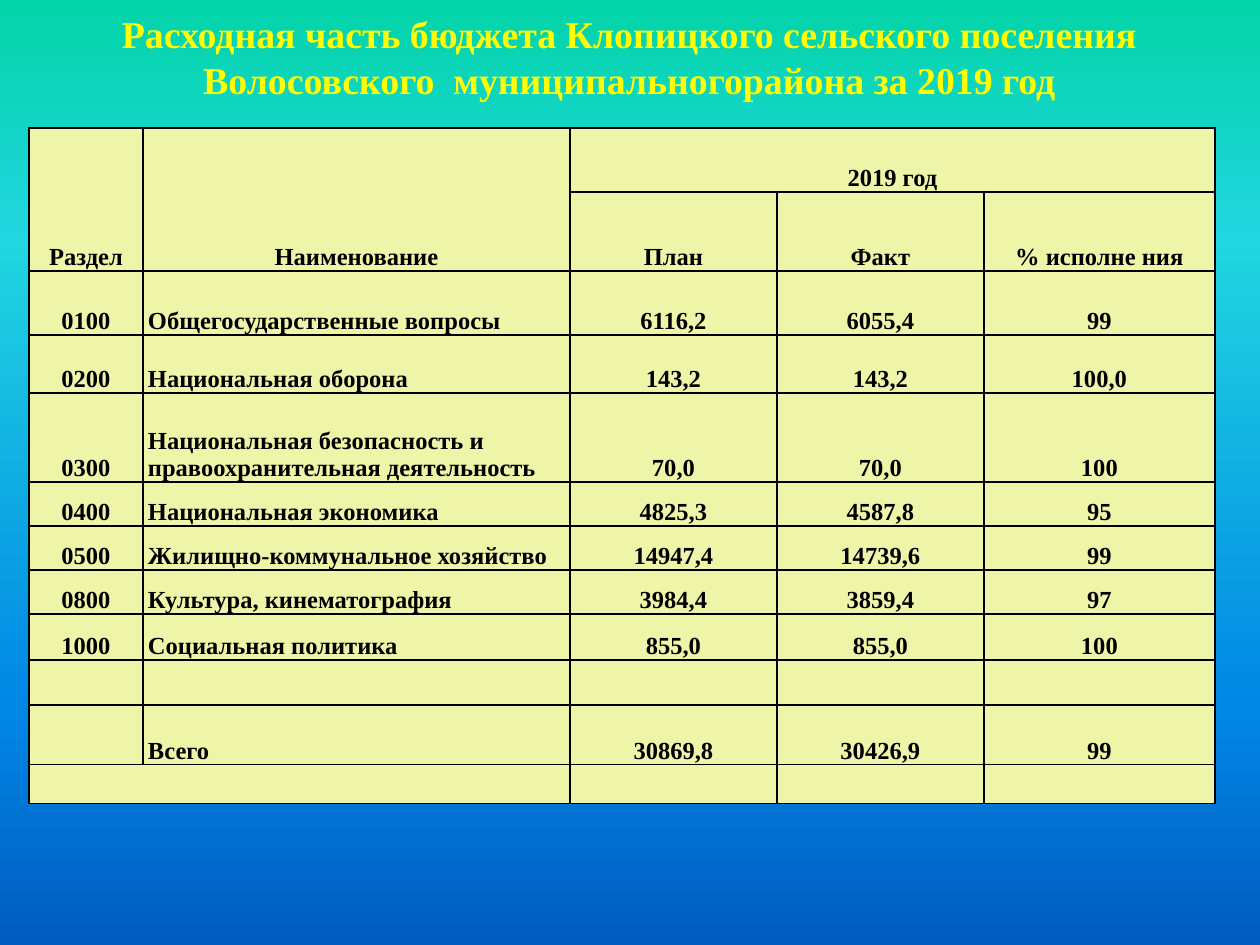
from copy import deepcopy

from lxml.etree import SubElement
from pptx import Presentation
from pptx.dml.color import RGBColor
from pptx.enum.text import MSO_ANCHOR as Anchor, MSO_AUTO_SIZE as AutoSize, PP_ALIGN as Align
from pptx.oxml.ns import qn
from pptx.util import Pt

EMU_PER_PX = 914400 // 126
COLORS = {"title": "FFFF00", "ink": "000000", "cell": "EEF5A9"}
SKY = [(0, "03D4A8"), (25, "21D6E0"), (75, "0087E6"), (100, "005CBF")]

TITLE = ("Расходная часть бюджета Клопицкого сельского поселения "
         "Волосовского  муниципальногорайона за 2019 год")
TITLE_FONT = {"name": "Times New Roman", "size": Pt(21.6), "bold": True}
TABLE_FONT = {"name": "Times New Roman", "size": Pt(14), "bold": True}

COLUMN_WIDTHS = [114, 427, 207, 207, 231]
ROW_HEIGHTS = [64, 79, 64, 58, 89, 44, 44, 44, 46, 45, 60, 39]
HEADER_ROWS = 2
NAME_COLUMN = 1
BUDGET = [
    ["Раздел", "Наименование", "2019 год", "", ""],
    ["", "", "План", "Факт", "% исполне ния"],
    ["0100", "Общегосударственные вопросы", "6116,2", "6055,4", "99"],
    ["0200", "Национальная оборона", "143,2", "143,2", "100,0"],
    ["0300", "Национальная безопасность и правоохранительная деятельность",
     "70,0", "70,0", "100"],
    ["0400", "Национальная экономика", "4825,3", "4587,8", "95"],
    ["0500", "Жилищно-коммунальное хозяйство", "14947,4", "14739,6", "99"],
    ["0800", "Культура, кинематография", "3984,4", "3859,4", "97"],
    ["1000", "Социальная политика", "855,0", "855,0", "100"],
    ["", "", "", "", ""],
    ["", "Всего", "30869,8", "30426,9", "99"],
    ["", "", "", "", ""],
]
# Merged areas: first and last cell as (row, column)
MERGES = [((0, 0), (1, 0)), ((0, 1), (1, 1)), ((0, 2), (0, 4)), ((11, 0), (11, 1))]


def px(length):
    return length * EMU_PER_PX


def apply_format(target, values):
    for name, value in values.items():
        setattr(target, name, value)


def write(paragraph, text, font, color):
    run = paragraph.add_run()
    run.text = text
    apply_format(run.font, font)
    run.font.color.rgb = RGBColor.from_string(COLORS[color])


def paint_background(slide):
    fill = slide.background.fill
    fill.gradient()
    fill.gradient_angle = 270  # downwards
    stop_list = slide.element.find(".//" + qn("a:gsLst"))
    while len(stop_list) < len(SKY):
        stop_list.append(deepcopy(stop_list[0]))
    for stop, (position, color) in zip(fill.gradient_stops, SKY):
        stop.position = position / 100
        stop.color.rgb = RGBColor.from_string(color)


def add_title(slide):
    title = slide.shapes.title
    apply_format(title, {"left": px(29), "top": 0, "width": px(1201), "height": px(108)})
    apply_format(title.text_frame, {"word_wrap": True, "auto_size": AutoSize.NONE,
                                    "vertical_anchor": Anchor.BOTTOM})
    heading = title.text_frame.paragraphs[0]
    heading.alignment = Align.CENTER
    write(heading, TITLE, TITLE_FONT, "title")


def add_borders(cell):
    properties = cell._tc.get_or_add_tcPr()
    for position, side in enumerate(("a:lnL", "a:lnR", "a:lnT", "a:lnB")):
        line = SubElement(properties, qn(side), w=str(Pt(1)))
        SubElement(SubElement(line, qn("a:solidFill")), qn("a:srgbClr"), val=COLORS["ink"])
        properties.insert(position, line)  # borders come before the fill


def format_cell(cell, text, is_name):
    apply_format(cell, {"margin_left": px(5 if is_name else 1), "margin_right": px(1),
                        "margin_top": px(1), "margin_bottom": 0,
                        "vertical_anchor": Anchor.BOTTOM})
    cell.fill.solid()
    cell.fill.fore_color.rgb = RGBColor.from_string(COLORS["cell"])
    add_borders(cell)
    paragraph = cell.text_frame.paragraphs[0]
    paragraph.alignment = Align.LEFT if is_name else Align.CENTER
    if text:
        write(paragraph, text, TABLE_FONT, "ink")
    else:  # keeps blank rows from growing
        SubElement(paragraph._p, qn("a:endParaRPr"), sz="1400")


def add_budget_table(slide):
    frame = slide.shapes.add_table(len(ROW_HEIGHTS), len(COLUMN_WIDTHS), px(29), px(128),
                                   px(sum(COLUMN_WIDTHS)), px(sum(ROW_HEIGHTS)))
    table = frame.table
    for column, width in zip(table.columns, COLUMN_WIDTHS):
        column.width = px(width)
    for row, height in zip(table.rows, ROW_HEIGHTS):
        row.height = px(height)
    for r, texts in enumerate(BUDGET):
        for c, text in enumerate(texts):
            is_name = c == NAME_COLUMN and r >= HEADER_ROWS
            format_cell(table.cell(r, c), text, is_name)
    for first, last in MERGES:
        table.cell(*first).merge(table.cell(*last))


def main():
    presentation = Presentation()
    apply_format(presentation, {"slide_width": px(1260), "slide_height": px(945)})
    slide = presentation.slides.add_slide(presentation.slide_layouts[5])  # title only
    paint_background(slide)
    add_title(slide)
    add_budget_table(slide)
    presentation.save("out.pptx")


if __name__ == "__main__":
    main()
